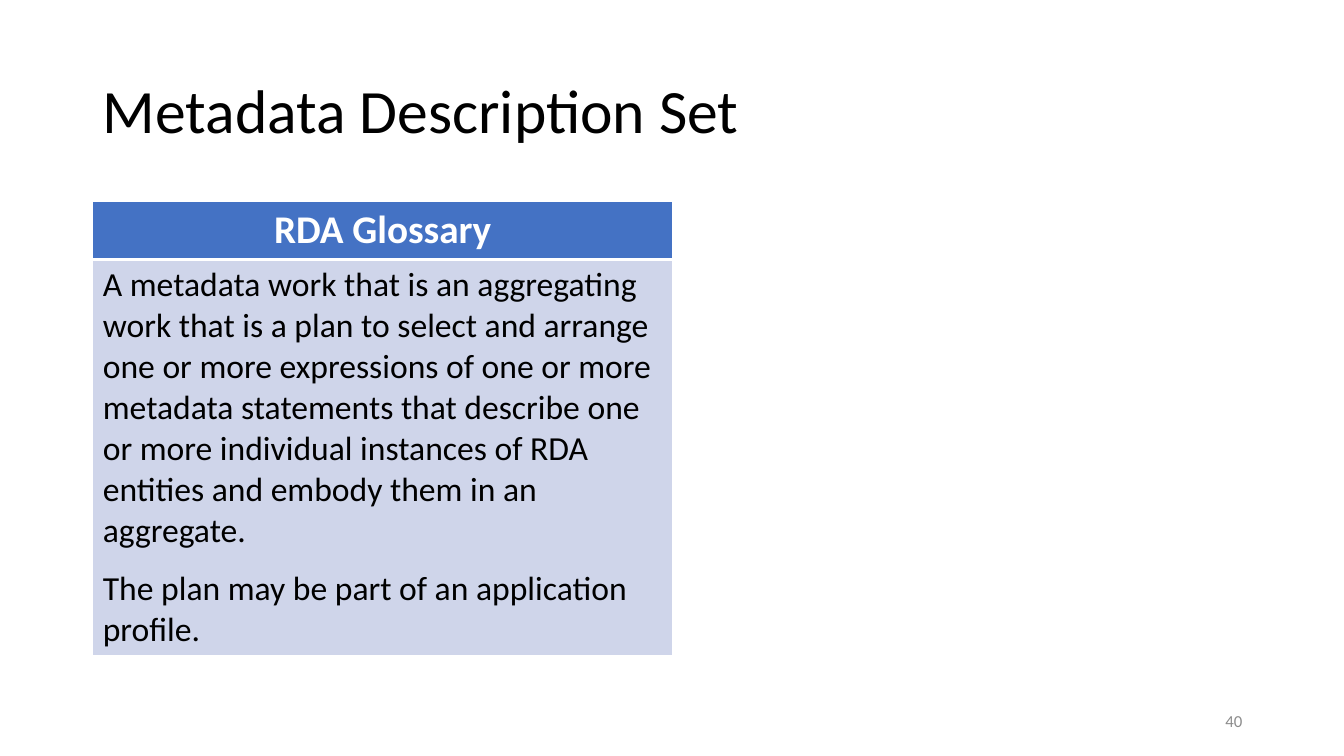
from dataclasses import dataclass

from lxml.etree import SubElement
from pptx import Presentation
from pptx.dml.color import RGBColor as Color
from pptx.enum.text import MSO_ANCHOR as Anchor, MSO_AUTO_SIZE as AutoSize, PP_ALIGN as Align
from pptx.oxml.ns import qn
from pptx.util import Inches, Pt

# Content
TITLE = "Metadata Description Set"
TABLE_ROWS = [
    (["RDA Glossary"], []),
    (
        [
            "A metadata work that is an aggregating work that is a plan to select and "
            "arrange one or more expressions of one or more metadata statements that "
            "describe one or more individual instances of RDA entities and embody them "
            "in an aggregate.",
            "The plan may be part of an application profile.",
        ],
        [],
    ),
]
SLIDE_NUMBER = "40"


@dataclass(frozen=True)
class Theme:
    font: str = "Calibri"
    text: str = "000000"
    white: str = "FFFFFF"
    header_fill: str = "4472C4"
    body_fill: str = "CFD5EA"
    number: str = "8C8C8C"
    title_size: int = 44
    header_size: int = 28
    body_size: int = 24
    number_size: int = 12


THEME = Theme()

# Layout in inches
LEFT, WIDTH = 0.92, 11.5
TITLE_TOP, TITLE_HEIGHT = 0.4, 1.45
TABLE_TOP = 2
ROW_HEIGHTS = [0.57, 3.93]
NUMBER_TOP, NUMBER_WIDTH, NUMBER_HEIGHT = 6.95, 3, 0.4


def format_paragraph(paragraph, size, color, align=Align.LEFT, bold=False):
    paragraph.alignment = align
    for run in paragraph.runs:
        run.font.name = THEME.font
        run.font.size = Pt(size)
        run.font.bold = bold
        run.font.color.rgb = Color.from_string(color)


def set_borders(cell, widths):
    """Draw white cell borders, given a width in points for each side."""
    properties = cell._tc.get_or_add_tcPr()
    for position, (side, width) in enumerate(widths.items()):
        line = SubElement(properties, qn(f"a:ln{side}"), w=str(Pt(width)))
        fill = SubElement(line, qn("a:solidFill"))
        SubElement(fill, qn("a:srgbClr"), val=THEME.white)
        properties.insert(position, line)


def add_title(slide):
    title = slide.shapes.title
    title.left, title.top = Inches(LEFT), Inches(TITLE_TOP)
    title.width, title.height = Inches(WIDTH), Inches(TITLE_HEIGHT)
    frame = title.text_frame
    frame.text = TITLE
    frame.auto_size = AutoSize.NONE
    frame.vertical_anchor = Anchor.MIDDLE
    frame.paragraphs[0].line_spacing = 0.9
    format_paragraph(frame.paragraphs[0], THEME.title_size, THEME.text)


def add_glossary_table(slide):
    row_count, column_count = len(TABLE_ROWS), len(TABLE_ROWS[0])
    table = slide.shapes.add_table(
        row_count, column_count, Inches(LEFT), Inches(TABLE_TOP),
        Inches(WIDTH), Inches(sum(ROW_HEIGHTS)),
    ).table
    for row_index, row in enumerate(TABLE_ROWS):
        table.rows[row_index].height = Inches(ROW_HEIGHTS[row_index])
        header = row_index == 0
        for column_index, texts in enumerate(row):
            cell = table.cell(row_index, column_index)
            filled = THEME.header_fill if header else THEME.body_fill
            cell.fill.solid()
            cell.fill.fore_color.rgb = Color.from_string(filled if texts else THEME.white)
            set_borders(cell, {"L": 1, "R": 1, "T": 1 if header else 3, "B": 3 if header else 1})
            cell.text_frame.text = "\n".join(texts)
            for index, paragraph in enumerate(cell.text_frame.paragraphs):
                if header:
                    format_paragraph(paragraph, THEME.header_size, THEME.white, Align.CENTER, True)
                else:
                    format_paragraph(paragraph, THEME.body_size, THEME.text)
                if index > 0:
                    paragraph.space_before = Pt(12)


def add_slide_number(slide):
    box = slide.shapes.add_textbox(
        Inches(LEFT + WIDTH - NUMBER_WIDTH), Inches(NUMBER_TOP),
        Inches(NUMBER_WIDTH), Inches(NUMBER_HEIGHT),
    )
    frame = box.text_frame
    frame.word_wrap = True
    frame.vertical_anchor = Anchor.MIDDLE
    frame.text = SLIDE_NUMBER
    format_paragraph(frame.paragraphs[0], THEME.number_size, THEME.number, Align.RIGHT)


def main():
    presentation = Presentation()
    presentation.slide_width, presentation.slide_height = Inches(13.33), Inches(7.5)
    slide = presentation.slides.add_slide(presentation.slide_layouts.get_by_name("Title Only"))
    add_title(slide)
    add_glossary_table(slide)
    add_slide_number(slide)
    presentation.save("out.pptx")


if __name__ == "__main__":
    main()
